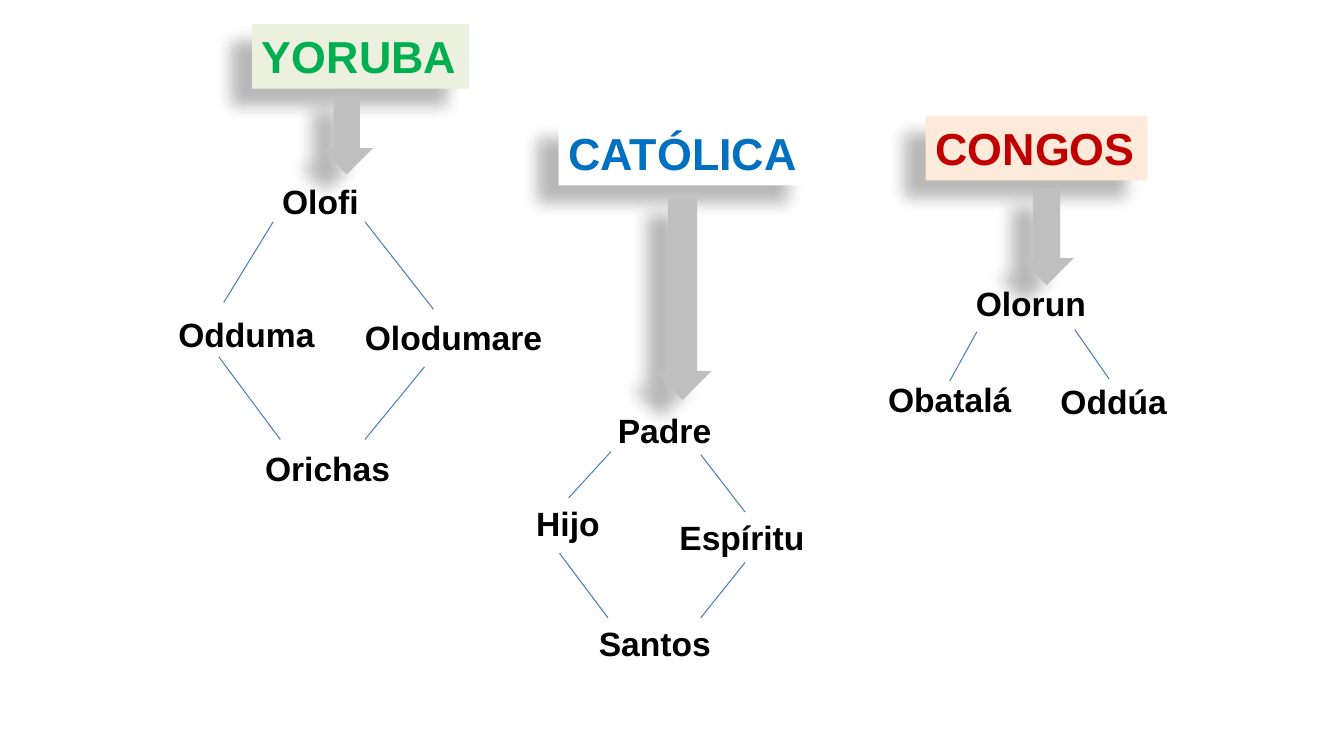
from lxml import etree
from pptx import Presentation
from pptx.dml.color import RGBColor
from pptx.enum.shapes import MSO_CONNECTOR, MSO_SHAPE
from pptx.enum.text import MSO_ANCHOR, MSO_AUTO_SIZE, PP_ALIGN
from pptx.oxml.ns import qn
from pptx.util import Inches, Pt

RECTANGLE = MSO_SHAPE.RECTANGLE
DOWN_ARROW = MSO_SHAPE.DOWN_ARROW
STRAIGHT = MSO_CONNECTOR.STRAIGHT
TOP = MSO_ANCHOR.TOP
LEFT = PP_ALIGN.LEFT
FIT_SHAPE = MSO_AUTO_SIZE.SHAPE_TO_FIT_TEXT

FONT = "Arial"
BLANK_LAYOUT = 6
HEADING_HEIGHT = 0.64
NAME_HEIGHT = 0.5
COLORS = {
    "black": "000000",
    "line": "4B7EBC",
    "arrow": "BFBFBF",
    "green": "00B050",
    "pale green": "EBF1DE",
    "blue": "0070C0",
    "white": "FFFFFF",
    "red": "C00000",
    "pale red": "FDEADA",
}

# Heading: text, left, top, width, text colour, fill.
# Arrow: left, top, width, height. Names: text, left, top, width.
# Links: start x, start y, end x, end y.
RELIGIONS = [
    {
        "heading": ("YORUBA", 2.5, 0.24, 2.15, "green", "pale green"),
        "arrow": (3.18, 0.94, 0.52, 0.79),
        "names": [
            ("Olofi", 2.7, 1.75, 0.97),
            ("Odduma", 1.67, 3.07, 1.57),
            ("Olodumare", 3.52, 3.09, 1.98),
            ("Orichas", 2.53, 4.39, 1.58),
        ],
        "links": [
            (2.71, 2.2, 2.22, 3),
            (3.62, 2.2, 4.3, 3.07),
            (2.17, 3.54, 2.78, 4.36),
            (4.21, 3.64, 3.62, 4.36),
        ],
    },
    {
        "heading": ("CATÓLICA", 5.54, 1.2, 2.49, "blue", "white"),
        "arrow": (6.48, 1.96, 0.58, 2.01),
        "names": [
            ("Padre", 6.03, 4.02, 1.14),
            ("Hijo", 5.22, 4.94, 0.84),
            ("Espíritu", 6.64, 5.08, 1.5),
            ("Santos", 5.84, 6.13, 1.32),
        ],
        "links": [
            (6.06, 4.48, 5.64, 4.94),
            (6.95, 4.51, 7.39, 5.08),
            (5.55, 5.49, 6.03, 6.13),
            (7.39, 5.58, 6.95, 6.13),
        ],
    },
    {
        "heading": ("CONGOS", 9.18, 1.15, 2.2, "red", "pale red"),
        "arrow": (10.11, 1.89, 0.54, 0.94),
        "names": [
            ("Olorun", 9.58, 2.76, 1.3),
            ("Obatalá", 8.71, 3.71, 1.44),
            ("Oddúa", 10.42, 3.73, 1.27),
        ],
        "links": [
            (9.69, 3.29, 9.42, 3.78),
            (10.66, 3.27, 11, 3.76),
        ],
    },
]


def rgb(name):
    return RGBColor.from_string(COLORS[name])


def add_shadow(shape):
    """Cast a soft shadow down and to the left."""
    shape.shadow.inherit = False
    effects = shape._element.spPr.find(qn("a:effectLst"))
    shadow = etree.SubElement(
        effects, qn("a:outerShdw"), blurRad=str(Pt(11.8)), dist=str(Pt(19.7)),
        dir=str(141 * 60000), algn="ctr", rotWithShape="0")
    color = etree.SubElement(shadow, qn("a:srgbClr"), val=COLORS["black"])
    etree.SubElement(color, qn("a:alpha"), val="28000")


def add_shadowed_shape(slide, kind, box, fill):
    shape = slide.shapes.add_shape(kind, *map(Inches, box))
    shape.fill.solid()
    shape.fill.fore_color.rgb = rgb(fill)
    shape.line.fill.background()
    add_shadow(shape)
    return shape


def set_text(shape, text, size, color):
    frame = shape.text_frame
    frame.text = text
    frame.word_wrap = False
    frame.auto_size = FIT_SHAPE
    frame.vertical_anchor = TOP
    paragraph = frame.paragraphs[0]
    paragraph.alignment = LEFT
    font = paragraph.runs[0].font
    font.name = FONT
    font.size = Pt(size)
    font.bold = True
    font.color.rgb = rgb(color)


def add_heading(slide, text, left, top, width, color, fill):
    box = (left, top, width, HEADING_HEIGHT)
    set_text(add_shadowed_shape(slide, RECTANGLE, box, fill), text, 32, color)


def add_name(slide, text, left, top, width):
    box = (left, top, width, NAME_HEIGHT)
    set_text(slide.shapes.add_textbox(*map(Inches, box)), text, 24, "black")


def add_link(slide, ends):
    link = slide.shapes.add_connector(STRAIGHT, *map(Inches, ends))
    link.line.color.rgb = rgb("line")
    link.line.width = Pt(0.75)
    etree.SubElement(link._element.spPr, qn("a:effectLst"))


def main():
    presentation = Presentation()
    presentation.slide_width = Inches(13.33)
    presentation.slide_height = Inches(7.5)
    slide = presentation.slides.add_slide(presentation.slide_layouts[BLANK_LAYOUT])
    for religion in RELIGIONS:
        add_heading(slide, *religion["heading"])
        for name in religion["names"]:
            add_name(slide, *name)
        for ends in religion["links"]:
            add_link(slide, ends)
    for religion in RELIGIONS:
        add_shadowed_shape(slide, DOWN_ARROW, religion["arrow"], "arrow")
    presentation.save("out.pptx")


if __name__ == "__main__":
    main()
